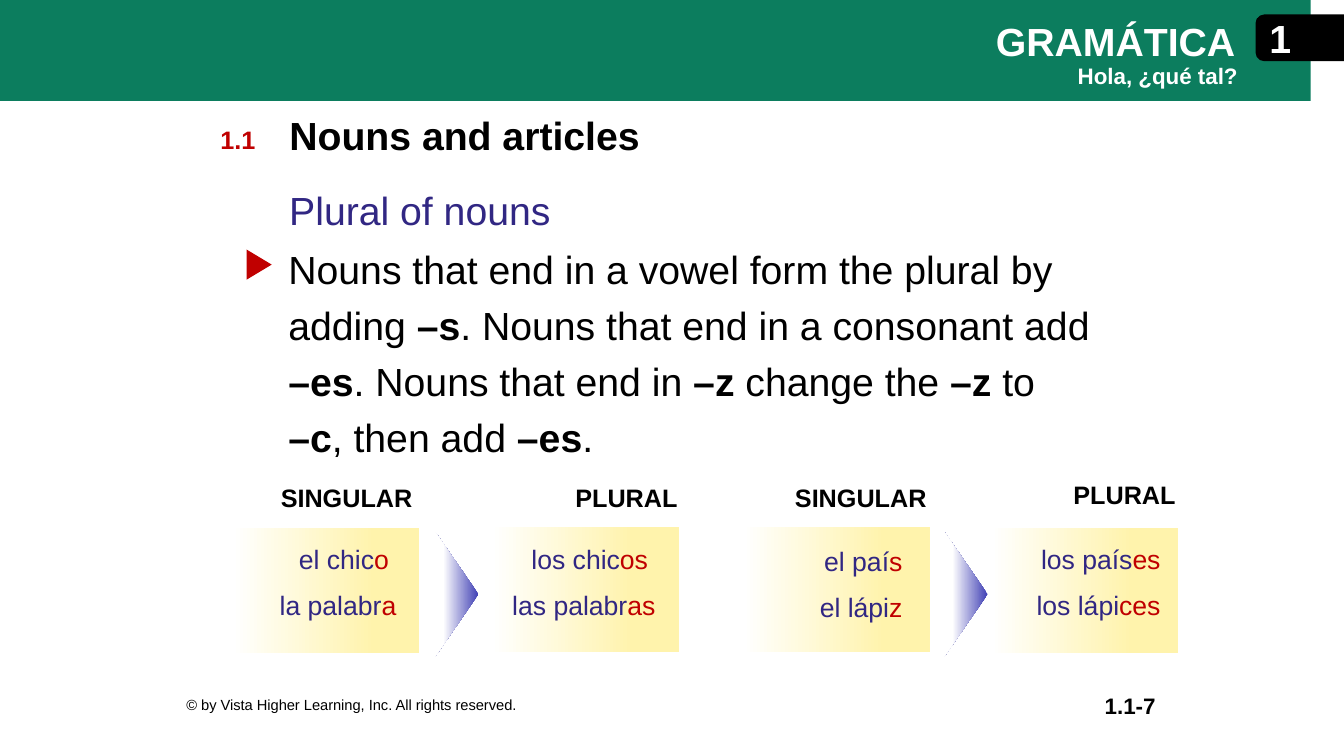
import pptx
import pptx.dml.color
import pptx.enum.shapes
import pptx.enum.text
import pptx.util

Inches, Pt = pptx.util.Inches, pptx.util.Pt
RGBColor = pptx.dml.color.RGBColor
MSO_SHAPE = pptx.enum.shapes.MSO_SHAPE
PP_ALIGN = pptx.enum.text.PP_ALIGN
MSO_ANCHOR = pptx.enum.text.MSO_ANCHOR
MSO_AUTO_SIZE = pptx.enum.text.MSO_AUTO_SIZE

GREEN = RGBColor(0x0C, 0x7D, 0x5E)
RED = RGBColor(0xC0, 0x00, 0x00)
VIOLET = RGBColor(0x31, 0x27, 0x83)
BLUE = RGBColor(0x41, 0x41, 0xB5)
YELLOW = RGBColor(0xFF, 0xF3, 0xAC)
BLACK = RGBColor(0, 0, 0)
WHITE = RGBColor(0xFF, 0xFF, 0xFF)
FONT = "Arial"
NO_GRID_STYLE = "{2D5ABB26-0587-4C30-8999-92F81FD0307C}"

# Content
TITLE = "Nouns and articles"
BANNER = [(0, -0.01), (13.33, 0), (13.33, 1.41), (9.86, 1.03),
          (7.52, 0.85), (4.34, 0.67), (0, 0.6)]

# Rule lines as (text, bold) runs
RULE = [
    [("Nouns that end in a vowel form the plural by", False)],
    [("adding ", False), ("–s", True),
     (". Nouns that end in a consonant add", False)],
    [("–es", True), (". Nouns that end in ", False), ("–z", True),
     (" change the ", False), ("–z", True), (" to", False)],
    [("–c", True), (", then add ", False), ("–es", True), (".", False)],
]

# text, (left, top, width, height), size, colour, bold, align, anchor
LEFT, CENTER, RIGHT = PP_ALIGN.LEFT, PP_ALIGN.CENTER, PP_ALIGN.RIGHT
TOP, MIDDLE = MSO_ANCHOR.TOP, MSO_ANCHOR.MIDDLE
LABELS = [
    ("1.1", (1.95, 1.18, 0.82, 0.4), 18, RED, True, CENTER, MIDDLE),
    ("GRAMÁTICA", (9.78, 0.12, 3.55, 0.57), 28, WHITE, True, LEFT, TOP),
    ("Hola, ¿qué tal?", (10.59, 0.57, 1.82, 0.37), 16, WHITE, True, LEFT, TOP),
    ("1", (12.49, 0.18, 0.35, 0.4), 28, WHITE, True, CENTER, MIDDLE),
    ("1.1-7", (8.55, 6.82, 3.01, 0.35), 16, BLACK, True, RIGHT, MIDDLE),
    ("© by Vista Higher Learning, Inc. All rights reserved.",
     (1.75, 6.82, 6.45, 0.35), 10.5, BLACK, False, LEFT, MIDDLE),
    ("Plural of nouns", (2.77, 1.8, 8.28, 0.57), 28, VIOLET, False, LEFT, TOP),
]

# heading, heading (left, top, width), words as (stem, ending),
# words (left, top, width), panel (left, top)
COLUMNS = [
    ("SINGULAR", (2.51, 4.71, 1.88), [("el chic", "o "), ("la palabr", "a")],
     (2.51, 5.28, 1.8), (2.31, 5.24)),
    ("PLURAL", (5.33, 4.71, 1.69), [("los chic", "os "), ("las palabr", "as")],
     (4.86, 5.28, 2.02), (4.88, 5.23)),
    ("SINGULAR", (7.61, 4.71, 1.88), [("el paí", "s"), ("el lápi", "z")],
     (7.53, 5.3, 1.8), (7.37, 5.23)),
    ("PLURAL", (10.27, 4.68, 1.69), [("los país", "es"), ("los lápi", "ces")],
     (9.87, 5.28, 2.02), (9.83, 5.24)),
]
ARROW_LEFTS = [3.91, 8.96]


def place(sp, box):
    sp.left, sp.top, sp.width, sp.height = map(Inches, box)


def add_run(p, text, size, color, bold=False):
    r = p.add_run()
    r.text = text
    r.font.name, r.font.size, r.font.bold = FONT, Pt(size), bold
    r.font.color.rgb = color


def add_solid(s, kind, box, color, rotation=0):
    sp = s.shapes.add_shape(kind, *map(Inches, box))
    sp.rotation = rotation
    sp.shadow.inherit = False
    sp.fill.solid()
    sp.fill.fore_color.rgb = color
    sp.line.fill.background()
    return sp


def set_gradient(sp, angle, stops):
    sp.fill.gradient()
    sp.fill.gradient_angle = angle
    for stop, (position, color) in zip(sp.fill.gradient_stops, stops):
        stop.position = position
        stop.color.rgb = color


def add_cell_table(s, box, lines, size, bold, insets, after):
    """One-cell table; each line is a list of (text, colour) runs."""
    table = s.shapes.add_table(1, 1, *map(Inches, box)).table
    table.first_row = table.horz_banding = False
    table._tbl.tblPr[0].text = NO_GRID_STYLE
    cell = table.cell(0, 0)
    cell.fill.background()
    (cell.margin_left, cell.margin_top,
     cell.margin_right, cell.margin_bottom) = map(Inches, insets)
    tf = cell.text_frame
    for i, runs in enumerate(lines):
        p = tf.add_paragraph() if i else tf.paragraphs[0]
        p.alignment = RIGHT
        p.space_after = Pt(after)
        for text, color in runs:
            add_run(p, text, size, color, bold)


def main():
    prs = pptx.Presentation()
    prs.slide_width, prs.slide_height = Inches(13.33), Inches(7.5)
    s = prs.slides.add_slide(prs.slide_layouts[1])

    # Header banner and chapter tab
    builder = s.shapes.build_freeform(*BANNER[0], scale=Inches(1))
    builder.add_line_segments(BANNER[1:], close=True)
    banner = builder.convert_to_shape()
    banner.shadow.inherit = False
    banner.fill.solid()
    banner.fill.fore_color.rgb = GREEN
    banner.line.fill.background()
    tab = add_solid(s, MSO_SHAPE.ROUND_2_SAME_RECTANGLE,
                    (12.67, -0.06, 0.45, 0.87), BLACK, 270)
    tab.adjustments[0] = 0.178
    tab.line.color.rgb = BLACK
    tab.line.width = Pt(1)

    # Title
    title = s.shapes.title
    place(title, (2.77, 1.05, 8.28, 0.57))
    tf = title.text_frame
    tf.auto_size = MSO_AUTO_SIZE.NONE
    tf.vertical_anchor = TOP
    tf.paragraphs[0].alignment = LEFT
    add_run(tf.paragraphs[0], TITLE, 28, BLACK, True)

    # Rule with its marker
    body = s.placeholders[1]
    place(body, (2.26, 2.29, 9, 2.39))
    tf = body.text_frame
    tf.auto_size = MSO_AUTO_SIZE.NONE
    for i, runs in enumerate(RULE):
        p = tf.add_paragraph() if i else tf.paragraphs[0]
        pPr = p._p.get_or_add_pPr()
        pPr.set("marL", str(Inches(0.5)))
        pPr.set("indent", "0")
        pPr.append(pptx.oxml.parse_xml(
            '<a:buNone xmlns:a="http://schemas.openxmlformats.org/drawingml/2006/main"/>'))
        p.line_spacing = Pt(40)
        p.space_before = Pt(0)
        for text, bold in runs:
            add_run(p, text, 28, BLACK, bold)
    add_solid(s, MSO_SHAPE.ISOSCELES_TRIANGLE, (2.42, 2.5, 0.3, 0.25), RED, 90)

    # Single-line labels
    for text, box, size, color, bold, align, anchor in LABELS:
        tf = s.shapes.add_textbox(*map(Inches, box)).text_frame
        tf.word_wrap = True
        tf.vertical_anchor = anchor
        tf.paragraphs[0].alignment = align
        add_run(tf.paragraphs[0], text, size, color, bold)

    # Singular and plural examples
    for heading, head_box, words, word_box, panel_at in COLUMNS:
        panel = add_solid(s, MSO_SHAPE.RECTANGLE, (*panel_at, 1.85, 1.24), YELLOW)
        set_gradient(panel, 0, [(0, WHITE), (0.76, YELLOW)])
        add_cell_table(s, (*head_box, 0.5), [[(heading, BLACK)]], 18, True,
                       (0.1, 0.1, 0.3, 0.1), 6)
        lines = [[(stem, VIOLET), (ending, RED)] for stem, ending in words]
        add_cell_table(s, (*word_box, 1.05), lines, 19, False,
                       (0.13, 0.13, 0.38, 0.13), 12)
    for left in ARROW_LEFTS:
        arrow = add_solid(s, MSO_SHAPE.ISOSCELES_TRIANGLE,
                          (left, 5.68, 1.24, 0.43), BLUE, 90)
        set_gradient(arrow, 270, [(0, BLUE), (0.81, WHITE)])

    prs.save("out.pptx")


if __name__ == "__main__":
    main()
